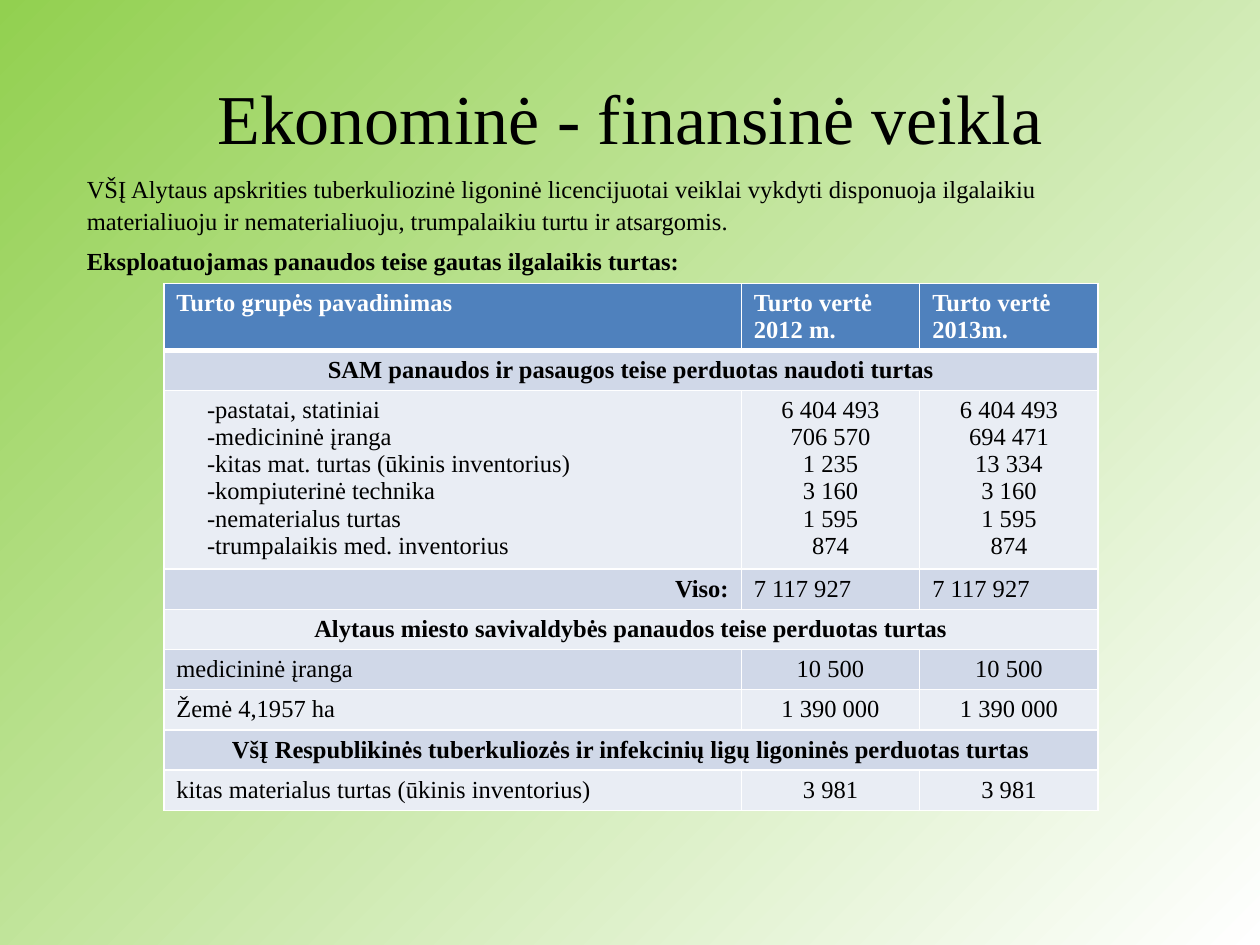
"""Build a slide on a hospital's long-term assets with a table of their values."""
from dataclasses import dataclass

from lxml.etree import SubElement
from pptx import Presentation
from pptx.dml.color import RGBColor
from pptx.enum.text import MSO_ANCHOR as Anchor, PP_ALIGN as Align
from pptx.oxml.ns import qn
from pptx.util import Pt

FONT = "Times New Roman"
BLACK, WHITE = "000000", "FFFFFF"
HEADER_FILL, BAND_FILLS = "4F81BD", ("D0D8E8", "E9EDF4")
COLUMN_WIDTHS = (330, 102, 102)
TABLE_LEFT, TABLE_TOP = 93.6, 162


@dataclass
class Row:
    cells: tuple[str, ...]
    height: float = 23
    aligns: tuple[Align, Align] = (Align.LEFT, Align.CENTER)
    bold_label: bool = False
    indent: float = 0


@dataclass
class Note:
    text: str
    top: float
    height: float
    bold: bool = False


def section(text: str) -> Row:
    """Describe a bold centred row that spans the table."""
    return Row((text,), aligns=(Align.CENTER, Align.CENTER), bold_label=True)


HEADER = Row(("Turto grupės pavadinimas", "Turto vertė\n2012 m.", "Turto vertė\n2013m."),
             38, (Align.LEFT, Align.LEFT))
BODY = [
    section("SAM panaudos ir pasaugos teise perduotas naudoti turtas"),
    Row(("-pastatai, statiniai\n-medicininė įranga\n-kitas mat. turtas (ūkinis inventorius)\n"
         "-kompiuterinė technika\n-nematerialus turtas\n-trumpalaikis med. inventorius",
         "6 404 493\n706 570\n1 235\n3 160\n1 595\n874",
         "6 404 493\n694 471\n13 334\n3 160\n1 595\n874"), 102, indent=17.5),
    Row(("Viso:", "7 117 927", "7 117 927"), aligns=(Align.RIGHT, Align.LEFT), bold_label=True),
    section("Alytaus miesto savivaldybės panaudos teise perduotas turtas"),
    Row(("medicininė įranga", "10 500", "10 500")),
    Row(("Žemė 4,1957 ha", "1 390 000", "1 390 000")),
    section("VšĮ Respublikinės tuberkuliozės ir infekcinių ligų ligoninės perduotas turtas"),
    Row(("kitas materialus turtas (ūkinis inventorius)", "3 981", "3 981")),
]
NOTES = [
    Note("VŠĮ Alytaus apskrities tuberkuliozinė ligoninė licencijuotai veiklai vykdyti disponuoja "
         "ilgalaikiu materialiuoju ir nematerialiuoju, trumpalaikiu turtu ir atsargomis.", 94.3, 41),
    Note("Eksploatuojamas panaudos teise gautas ilgalaikis turtas:", 135.4, 24.5, True),
]


def paint(color_format, color: str) -> None:
    """Give a colour format a hex colour."""
    color_format.rgb = RGBColor.from_string(color)


def write(frame, text: str, size: float = 14, color: str = BLACK, bold: bool = False,
          align: Align = Align.LEFT) -> None:
    """Set the text of a frame and format its paragraphs and runs."""
    frame.text = text
    for para in frame.paragraphs:
        para.alignment = align
        for span in para.runs:
            span.font.name, span.font.size, span.font.bold = FONT, Pt(size), bold
            paint(span.font.color, color)


def add_borders(cell, bottom: float) -> None:
    """Draw white borders round a cell."""
    properties = cell._tc.get_or_add_tcPr()
    for side, width in (("L", 1), ("R", 1), ("T", 1), ("B", bottom)):
        line = SubElement(properties, qn(f"a:ln{side}"), w=str(Pt(width)))
        fill = SubElement(line, qn("a:solidFill"))
        SubElement(fill, qn("a:srgbClr"), val=WHITE)


def fill_row(table, index: int, row: Row) -> None:
    """Fill and format one row of the table."""
    header = index == 0
    table.rows[index].height = Pt(row.height)
    for column in range(len(COLUMN_WIDTHS)):
        cell = table.cell(index, column)
        add_borders(cell, 3 if header else 1)
        cell.fill.solid()
        paint(cell.fill.fore_color, HEADER_FILL if header else BAND_FILLS[(index - 1) % 2])
    if len(row.cells) == 1:
        table.cell(index, 0).merge(table.cell(index, len(COLUMN_WIDTHS) - 1))
        table.cell(index, 0).vertical_anchor = Anchor.MIDDLE
    for column, text in enumerate(row.cells):
        frame = table.cell(index, column).text_frame
        write(frame, text, color=WHITE if header else BLACK,
              bold=header or (row.bold_label and column == 0), align=row.aligns[min(column, 1)])
        if row.indent and column == 0:
            for para in frame.paragraphs:
                para._p.get_or_add_pPr().set("marL", str(Pt(row.indent)))


def add_asset_table(page) -> None:
    """Add the table of asset values."""
    rows = [HEADER, *BODY]
    table = page.shapes.add_table(
        len(rows), len(COLUMN_WIDTHS), Pt(TABLE_LEFT), Pt(TABLE_TOP),
        Pt(sum(COLUMN_WIDTHS)), Pt(sum(row.height for row in rows))).table
    for column, width in zip(table.columns, COLUMN_WIDTHS):
        column.width = Pt(width)
    for index, row in enumerate(rows):
        fill_row(table, index, row)


def add_note(page, note: Note) -> None:
    """Add a line of introduction above the table."""
    box = page.shapes.add_textbox(Pt(42.5), Pt(note.top), Pt(635), Pt(note.height))
    box.text_frame.word_wrap = True
    write(box.text_frame, note.text, bold=note.bold)
    box.text_frame.paragraphs[0].line_spacing = 1.1


def add_title(page, text: str) -> None:
    """Place and format the title."""
    title = page.shapes.title
    title.left, title.top, title.width, title.height = Pt(36), Pt(21.6), Pt(648), Pt(90)
    title.text_frame.vertical_anchor = Anchor.MIDDLE
    write(title.text_frame, text, size=40, align=Align.CENTER)


def set_background(page) -> None:
    """Shade the page from green to white along the diagonal."""
    fill = page.background.fill
    fill.gradient()
    fill.gradient_angle = 315
    for stop, color in zip(fill.gradient_stops, ("92D050", WHITE)):
        paint(stop.color, color)


def main() -> None:
    """Build and save the deck."""
    deck = Presentation()
    deck.slide_width, deck.slide_height = Pt(720), Pt(540)
    page = deck.slides.add_slide(deck.slide_layouts[5])
    set_background(page)
    add_title(page, "Ekonominė - finansinė veikla")
    add_asset_table(page)
    for note in NOTES:
        add_note(page, note)
    deck.save("out.pptx")


if __name__ == "__main__":
    main()
